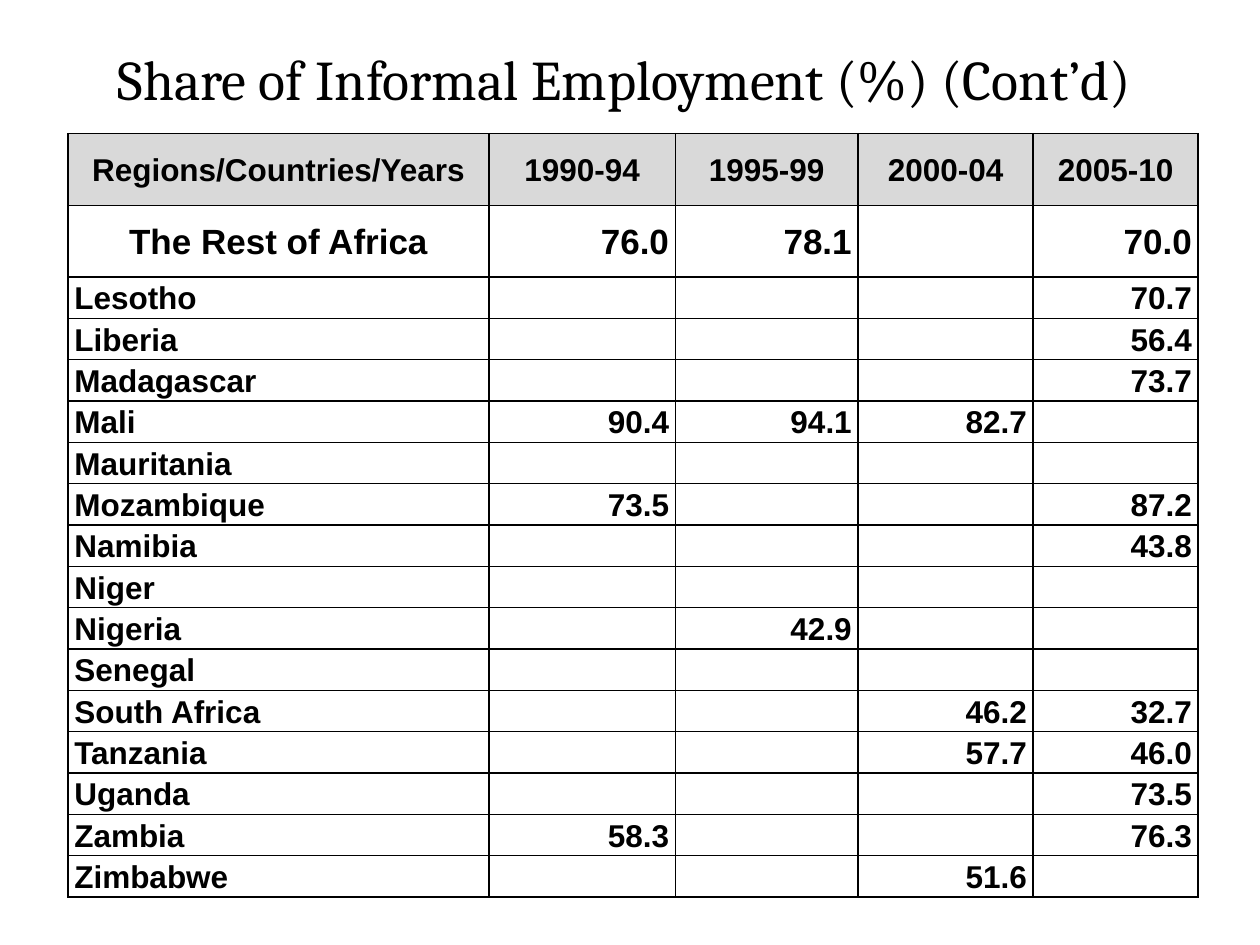
import pptx
import pptx.dml.color
import pptx.enum.text
import pptx.util
from lxml import etree
from pptx.oxml.ns import qn

Inches = pptx.util.Inches
Pt = pptx.util.Pt
ALIGN = pptx.enum.text.PP_ALIGN
MIDDLE = pptx.enum.text.MSO_ANCHOR.MIDDLE

COLORS = {"text": "000000", "border": "000000", "header": "D9D9D9"}

TITLE = "Share of Informal Employment (%) (Cont’d)"
COLUMNS = [3.34, 1.48, 1.45, 1.39, 1.31]
TABLE_HEIGHT = 6.06
TALL_ROW = 0.57
TALL_ROWS = 2  # header and regional total

ROWS = [
    ["Regions/Countries/Years", "1990-94", "1995-99", "2000-04", "2005-10"],
    ["The Rest of Africa", "76.0", "78.1", "", "70.0"],
    ["Lesotho", "", "", "", "70.7"],
    ["Liberia", "", "", "", "56.4"],
    ["Madagascar", "", "", "", "73.7"],
    ["Mali", "90.4", "94.1", "82.7", ""],
    ["Mauritania", "", "", "", ""],
    ["Mozambique", "73.5", "", "", "87.2"],
    ["Namibia", "", "", "", "43.8"],
    ["Niger", "", "", "", ""],
    ["Nigeria", "", "42.9", "", ""],
    ["Senegal", "", "", "", ""],
    ["South Africa", "", "", "46.2", "32.7"],
    ["Tanzania", "", "", "57.7", "46.0"],
    ["Uganda", "", "", "", "73.5"],
    ["Zambia", "58.3", "", "", "76.3"],
    ["Zimbabwe", "", "", "51.6", ""],
]


def rgb(name):
    return pptx.dml.color.RGBColor.from_string(COLORS[name])


def set_attrs(obj, values):
    for name, value in values.items():
        setattr(obj, name, value)


def add_run(p, text, font):
    r = p.add_run()
    r.text = text
    set_attrs(r.font, font)
    r.font.color.rgb = rgb("text")


def add_title(s):
    sp = s.shapes.add_textbox(Inches(0.17), Inches(0.21), Inches(9.58), Inches(0.82))
    tf = sp.text_frame
    set_attrs(tf, {"word_wrap": True, "vertical_anchor": MIDDLE})
    p = tf.paragraphs[0]
    p.alignment = ALIGN.CENTER
    add_run(p, TITLE, {"name": "Cambria", "size": Pt(32)})


def add_borders(cell):
    tc_pr = cell._tc.get_or_add_tcPr()
    for i, side in enumerate(("a:lnL", "a:lnR", "a:lnT", "a:lnB")):
        ln = etree.Element(qn(side), w=str(Pt(1)))
        fill = etree.SubElement(ln, qn("a:solidFill"))
        etree.SubElement(fill, qn("a:srgbClr"), val=COLORS["border"])
        tc_pr.insert(i, ln)  # borders come before the fill


def cell_alignment(row, col):
    if row == 0 or (row == 1 and col == 0):
        return ALIGN.CENTER
    return ALIGN.LEFT if col == 0 else ALIGN.RIGHT


def format_cell(cell, row, col, text):
    set_attrs(cell, {
        "margin_left": Inches(0.05), "margin_right": Inches(0.05),
        "margin_top": 0, "margin_bottom": 0, "vertical_anchor": MIDDLE,
    })
    if row == 0:
        cell.fill.solid()
        cell.fill.fore_color.rgb = rgb("header")
    else:
        cell.fill.background()
    add_borders(cell)
    if text:
        p = cell.text_frame.paragraphs[0]
        set_attrs(p, {"alignment": cell_alignment(row, col), "line_spacing": 1.07})
        size = Pt(20 if row == 1 else 18)
        add_run(p, text, {"name": "Arial", "size": size, "bold": True})


def add_share_table(s):
    table = s.shapes.add_table(
        len(ROWS), len(COLUMNS), Inches(0.54), Inches(1.06),
        Inches(sum(COLUMNS)), Inches(TABLE_HEIGHT)).table
    set_attrs(table, {"first_row": False, "horz_banding": False})
    for column, width in zip(table.columns, COLUMNS):
        column.width = Inches(width)

    # Country rows share the height left by the tall rows
    country_row = (TABLE_HEIGHT - TALL_ROWS * TALL_ROW) / (len(ROWS) - TALL_ROWS)
    for row, values in enumerate(ROWS):
        table.rows[row].height = Inches(TALL_ROW if row < TALL_ROWS else country_row)
        for col, text in enumerate(values):
            format_cell(table.cell(row, col), row, col, text)


def main():
    prs = pptx.Presentation()
    set_attrs(prs, {"slide_width": Inches(10), "slide_height": Inches(7.5)})
    s = prs.slides.add_slide(prs.slide_layouts[6])
    add_title(s)
    add_share_table(s)
    prs.save("out.pptx")


if __name__ == "__main__":
    main()
